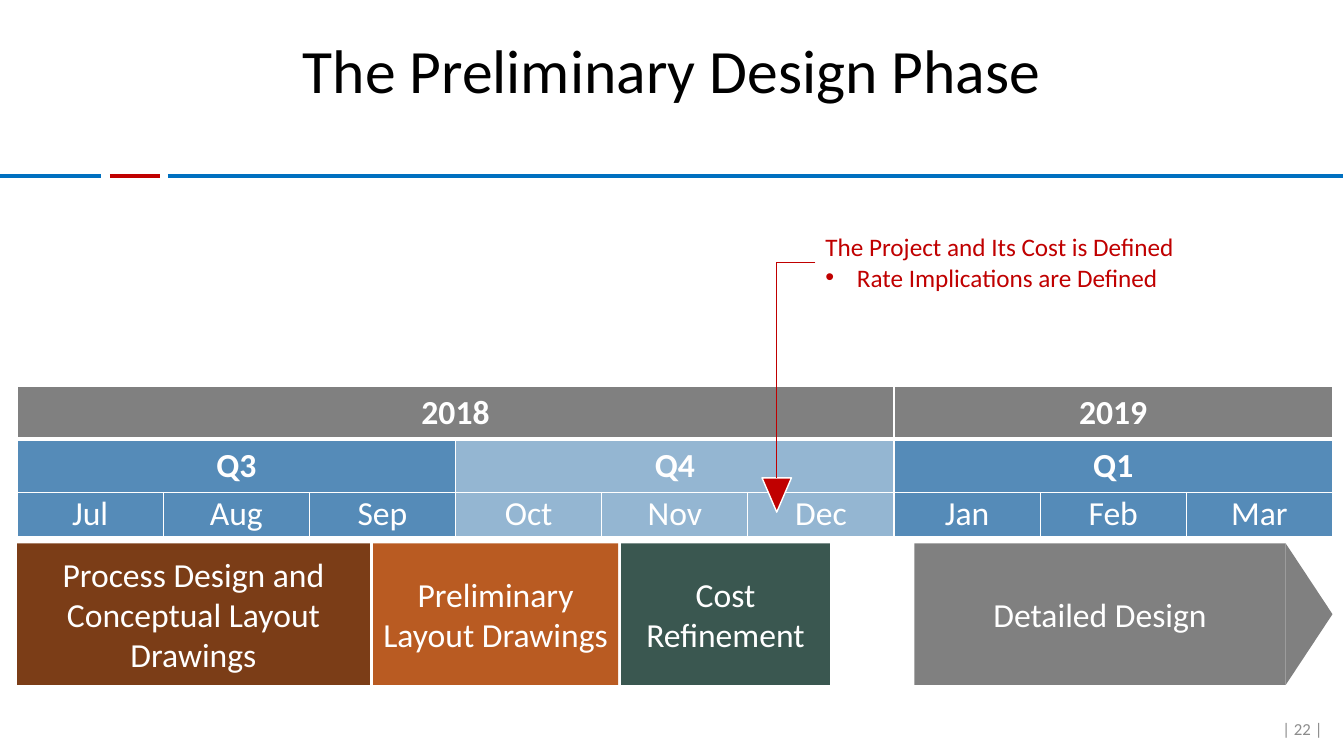
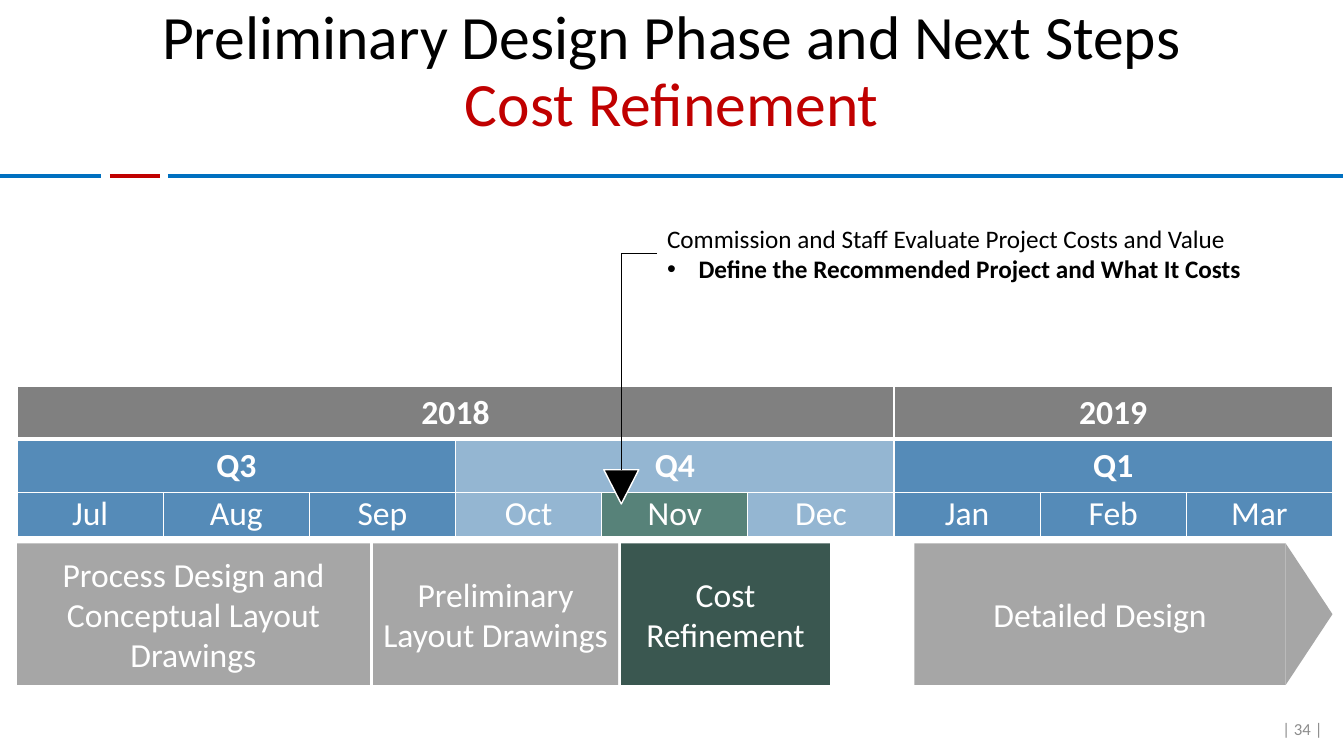
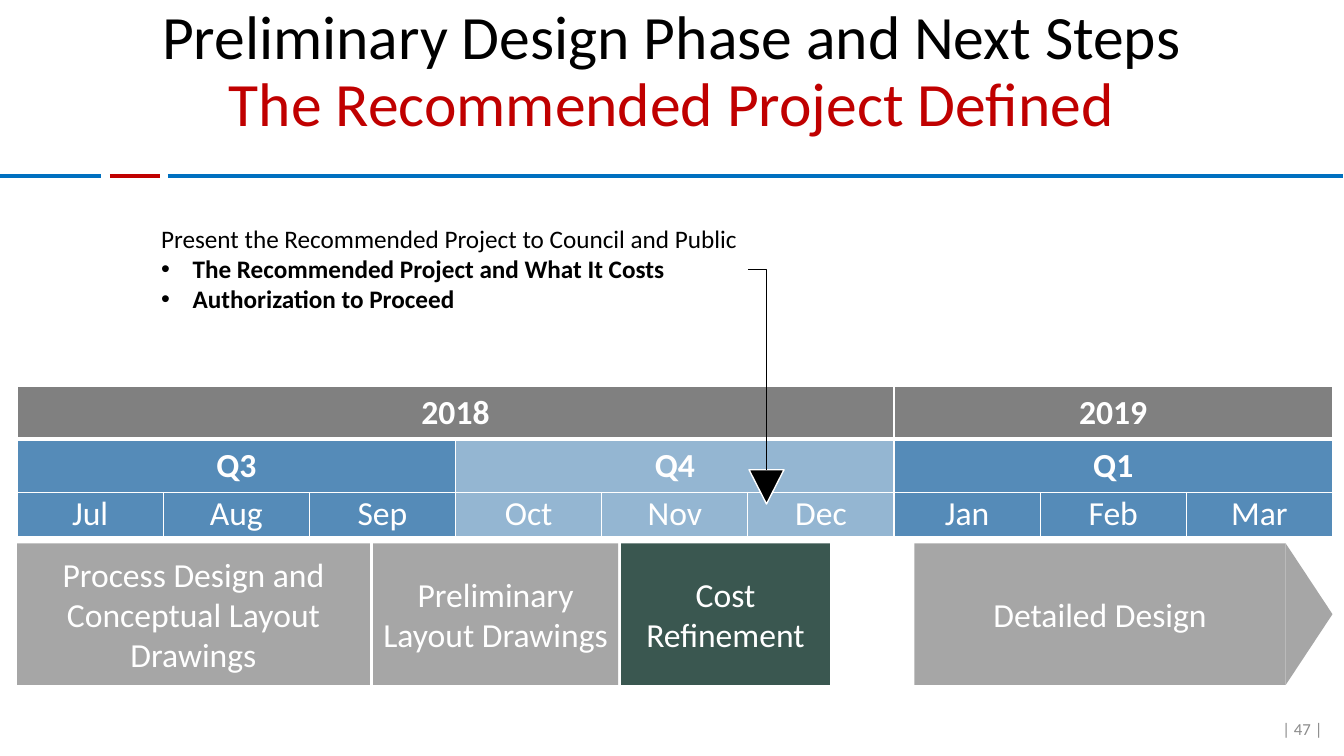
from collections import namedtuple

from lxml.etree import SubElement
from pptx import Presentation
from pptx.dml.color import RGBColor
from pptx.enum.shapes import MSO_CONNECTOR, MSO_SHAPE
from pptx.enum.text import MSO_ANCHOR, MSO_AUTO_SIZE, PP_ALIGN
from pptx.oxml.ns import qn
from pptx.util import Pt

Box = namedtuple("Box", "left top width height")

FONT = "Calibri"
BLACK, WHITE, RED, BLUE = "000000", "FFFFFF", "C00000", "0070C0"
GRAY, PALE_GRAY, FOOTER_GRAY = "808080", "A6A6A6", "8C8C8C"
QUARTER_BLUE, QUARTER_PALE, MONTH_GREEN = "558BB8", "94B6D2", "578279"
BROWN, ORANGE, GREEN = "7B3D17", "B95B22", "3A5750"

TITLE_BOX = Box(66, 0, 828, 104.4)
NUMBER_BOX = Box(894.2, 506.2, 57.6, 28.8)
CALENDAR_BOX = Box(12.2, 275.8, 939.6, 107.5)
PHASES_BOX = Box(12.2, 388.2, 939.6, 101)

RULE_TOP = 125.5
RULES = [(120, 959.5, BLUE), (0, 72, BLUE), (78.5, 114.5, RED)]
YEARS = [("2018", 6), ("2019", 3)]
QUARTERS = [("Q3", QUARTER_BLUE), ("Q4", QUARTER_PALE), ("Q1", QUARTER_BLUE)]
MONTHS = ["Jul", "Aug", "Sep", "Oct", "Nov", "Dec", "Jan", "Feb", "Mar"]
ROW_HEIGHTS = [38, 38, 31.5]
PHASES = [
    ("Process Design and Conceptual Layout Drawings", 0, 252),
    ("Preliminary Layout Drawings", 254.3, 175),
    ("Cost Refinement", 431.4, 149.2),
    ("Detailed Design", 641, 265.2),
]
LATER_COLORS = [PALE_GRAY, PALE_GRAY, GREEN, PALE_GRAY]
NEXT_STEPS = "Preliminary Design Phase and Next Steps"


def rgb(color):
    """Turn a hex string into a colour."""
    return RGBColor.from_string(color)


def points(*lengths):
    """Turn numbers into lengths in points."""
    return [Pt(length) for length in lengths]


def style_runs(paragraph, size, color, bold=False):
    """Format every run of a paragraph."""
    for run in paragraph.runs:
        run.font.name = FONT
        run.font.size = Pt(size)
        run.font.bold = bold
        run.font.color.rgb = rgb(color)


def add_text(slide, box, text, size, color, align):
    """Add a vertically centred text box and return its paragraph."""
    text_frame = slide.shapes.add_textbox(*points(*box)).text_frame
    text_frame.word_wrap = True
    text_frame.vertical_anchor = MSO_ANCHOR.MIDDLE
    paragraph = text_frame.paragraphs[0]
    paragraph.text = text
    paragraph.alignment = align
    style_runs(paragraph, size, color)
    return paragraph


def add_line(slide, kind, start, end, color, width):
    """Add a connector without shadow."""
    connector = slide.shapes.add_connector(kind, *points(*start, *end))
    connector.line.color.rgb = rgb(color)
    connector.line.width = Pt(width)
    SubElement(connector._element.spPr, qn("a:effectLst"))
    return connector


def add_block(slide, kind, box, color, rotation=0):
    """Add a flat filled shape without outline."""
    shape = slide.shapes.add_shape(kind, *points(*box))
    shape.shadow.inherit = False
    shape.fill.solid()
    shape.fill.fore_color.rgb = rgb(color)
    shape.line.fill.background()
    shape.rotation = rotation
    return shape


def add_frame(slide, title, subtitle, number):
    """Add the title, the rule below it and the page number."""
    for left, right, color in RULES:
        add_line(slide, MSO_CONNECTOR.STRAIGHT, (left, RULE_TOP), (right, RULE_TOP), color, 3)
    text = f"{title}\v{subtitle}" if subtitle else title
    paragraph = add_text(slide, TITLE_BOX, text, 44, BLACK, PP_ALIGN.CENTER)
    paragraph.line_spacing = 0.9
    for run in paragraph.runs[1:]:
        run.font.color.rgb = rgb(RED)
    add_text(slide, NUMBER_BOX, f"| {number} |", 12, FOOTER_GRAY, PP_ALIGN.RIGHT)


def set_borders(cell, top, bottom):
    """Draw white borders around a cell."""
    properties = cell._tc.get_or_add_tcPr()
    for side, width in (("L", 1), ("R", 1), ("T", top), ("B", bottom)):
        line = SubElement(properties, qn(f"a:ln{side}"), w=str(Pt(width)))
        SubElement(SubElement(line, qn("a:solidFill")), qn("a:srgbClr"), val=WHITE)


def fill_cell(cell, text, color, bold):
    """Write centred white text on a coloured cell."""
    cell.fill.solid()
    cell.fill.fore_color.rgb = rgb(color)
    cell.vertical_anchor = MSO_ANCHOR.MIDDLE
    paragraph = cell.text_frame.paragraphs[0]
    paragraph.text = text
    paragraph.alignment = PP_ALIGN.CENTER
    style_runs(paragraph, 24, WHITE, bold)


def add_calendar(slide, box, active_month):
    """Add the table of years, quarters and months."""
    table = slide.shapes.add_table(len(ROW_HEIGHTS), len(MONTHS), *points(*box)).table
    table.first_row = table.horz_banding = False
    for column in table.columns:
        column.width = Pt(box.width / len(MONTHS))
    for index, height in enumerate(ROW_HEIGHTS):
        table.rows[index].height = Pt(height)
        for column in range(len(MONTHS)):
            set_borders(table.cell(index, column), 3 if index == 1 else 1, 3 if index == 0 else 1)

    spans = [(0, text, span, GRAY) for text, span in YEARS]
    spans += [(1, text, 3, color) for text, color in QUARTERS]
    position = 0
    for row, text, span, color in spans:
        column = position % len(MONTHS)
        cell = table.cell(row, column)
        cell.merge(table.cell(row, column + span - 1))
        fill_cell(cell, text, color, True)
        position += span

    for column, month in enumerate(MONTHS):
        cell = table.cell(2, column)
        cell.margin_left = cell.margin_right = cell.margin_top = cell.margin_bottom = 0
        color = MONTH_GREEN if month == active_month else QUARTERS[column // 3][1]
        fill_cell(cell, month, color, False)


def add_phases(slide, box, colors):
    """Add the phase blocks, the last one ending in an arrow tip."""
    for (text, offset, width), color in zip(PHASES, colors):
        block = Box(box.left + offset, box.top, width, box.height)
        text_frame = add_block(slide, MSO_SHAPE.RECTANGLE, block, color).text_frame
        text_frame.word_wrap = True
        text_frame.margin_left = text_frame.margin_right = Pt(6)
        text_frame.vertical_anchor = MSO_ANCHOR.MIDDLE
        paragraph = text_frame.paragraphs[0]
        paragraph.text = text
        paragraph.alignment = PP_ALIGN.CENTER
        style_runs(paragraph, 24, WHITE)
    right = block.left + block.width
    depth = box.left + box.width - right
    inset = (box.height - depth) / 2
    tip = Box(right - inset, box.top + inset, box.height, depth)
    add_block(slide, MSO_SHAPE.ISOSCELES_TRIANGLE, tip, color, 90)


def add_callout(slide, box, lines, color, bold, marker):
    """Add a note, a marker on the calendar and the bent line between them."""
    center = marker.left + marker.width / 2
    triangle = add_block(slide, MSO_SHAPE.ISOSCELES_TRIANGLE, marker, color, 180)
    triangle.line.color.rgb = rgb(WHITE)
    triangle.line.width = Pt(1)

    text_frame = slide.shapes.add_textbox(*points(*box)).text_frame
    text_frame.word_wrap = True
    text_frame.auto_size = MSO_AUTO_SIZE.SHAPE_TO_FIT_TEXT
    text_frame.text = "\n".join(lines)
    for index, paragraph in enumerate(text_frame.paragraphs):
        style_runs(paragraph, 18, color, bold and index > 0)
        if index:
            properties = paragraph._p.get_or_add_pPr()
            properties.set("marL", str(Pt(22.5)))
            properties.set("indent", str(Pt(-22.5)))
            SubElement(properties, qn("a:buFont"), typeface="Arial")
            SubElement(properties, qn("a:buChar"), char="•")

    note_is_right = box.left > center
    edge = box.left if note_is_right else box.left + box.width
    start = (edge, box.top + box.height / 2)
    connector = add_line(slide, MSO_CONNECTOR.ELBOW, start, (center, marker.top), color, 0.5)
    properties = connector._element.spPr
    properties.find(qn("a:prstGeom")).set("prst", "bentConnector2")
    if note_is_right:
        transform = properties.find(qn("a:xfrm"))
        transform.attrib.pop("flipH")
        transform.set("rot", "10800000")
        transform.set("flipV", "1")


def add_timeline_slide(presentation, title, subtitle, number, phase_colors, callout, active_month=None):
    """Add one slide with the timeline and its callout."""
    slide = presentation.slides.add_slide(presentation.slide_layouts[6])
    add_frame(slide, title, subtitle, number)
    add_calendar(slide, CALENDAR_BOX, active_month)
    add_phases(slide, PHASES_BOX, phase_colors)
    add_callout(slide, *callout)


def main():
    """Build and save the presentation."""
    presentation = Presentation()
    presentation.slide_width, presentation.slide_height = points(960, 540)
    add_timeline_slide(
        presentation, "The Preliminary Design Phase", None, 22,
        [BROWN, ORANGE, GREEN, GRAY],
        (Box(582.5, 162, 336, 51),
         ["The Project and Its Cost is Defined", "Rate Implications are Defined"],
         RED, False, Box(544.3, 341.3, 21, 24.5)),
    )
    add_timeline_slide(
        presentation, NEXT_STEPS, "Cost Refinement", 34, LATER_COLORS,
        (Box(469.4, 155.8, 449, 51),
         ["Commission and Staff Evaluate Project Costs and Value",
          "Define the Recommended Project and What It Costs"],
         BLACK, True, Box(431.3, 335.5, 25, 24.5)),
        "Nov",
    )
    add_timeline_slide(
        presentation, NEXT_STEPS, "The Recommended Project Defined", 47, LATER_COLORS,
        (Box(108, 155.8, 426.2, 72.7),
         ["Present the Recommended Project to Council and Public",
          "The Recommended Project and What It Costs",
          "Authorization to Proceed"],
         BLACK, True, Box(535, 335.5, 25, 24.5)),
    )
    presentation.save("out.pptx")


if __name__ == "__main__":
    main()
